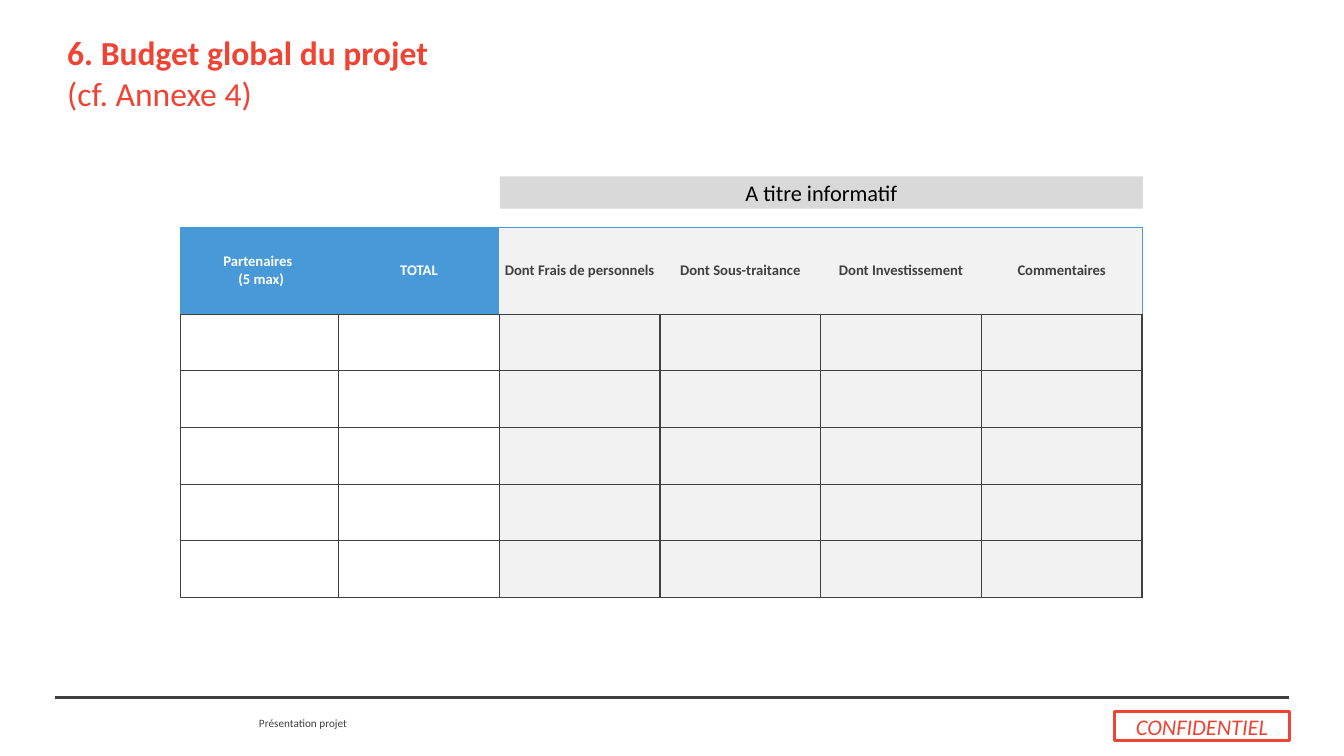
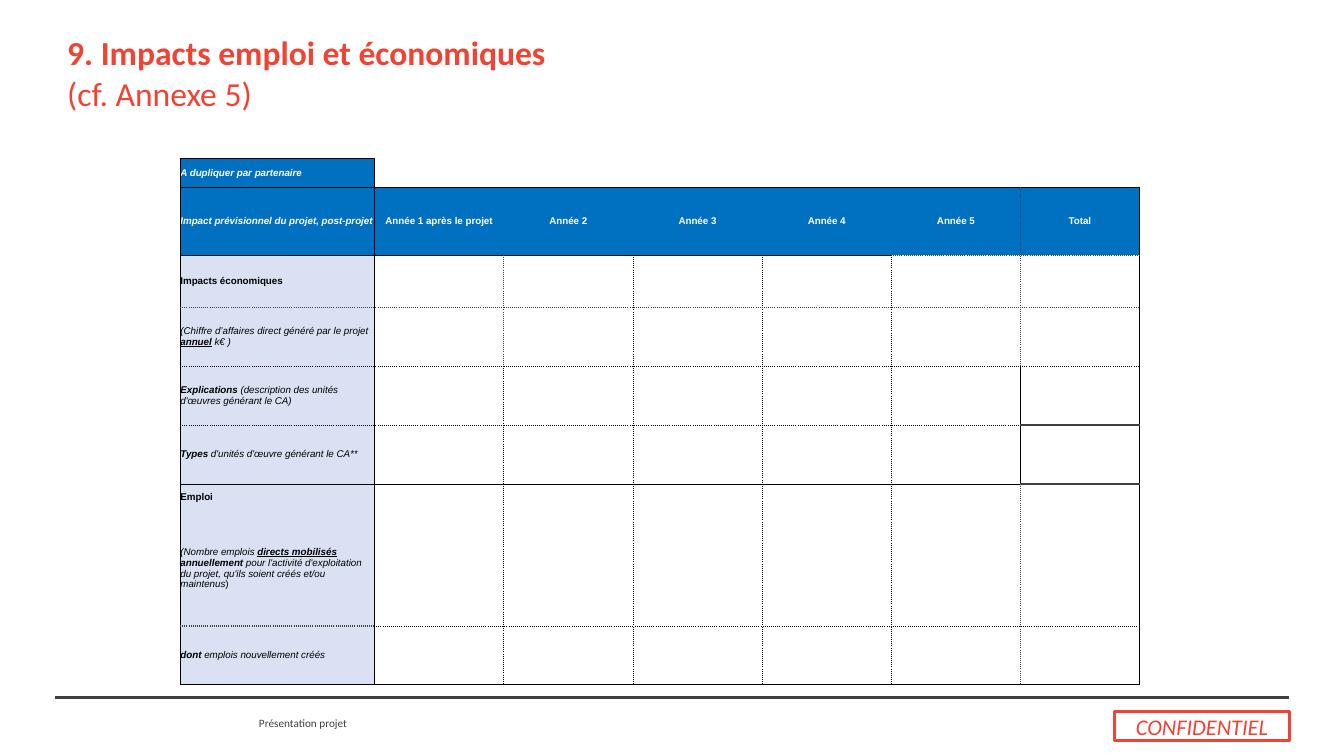
"""Build two project slides: overall budget, and job and economic impacts."""
from dataclasses import dataclass

from lxml.etree import SubElement
from pptx import Presentation
from pptx.dml.color import RGBColor as RGB
from pptx.enum.shapes import MSO_CONNECTOR as CONN, MSO_SHAPE as SHAPE
from pptx.enum.text import MSO_ANCHOR as ANCHOR, MSO_AUTO_SIZE as FIT, PP_ALIGN as ALIGN
from pptx.oxml.ns import qn
from pptx.util import Pt


@dataclass(frozen=True)
class Theme:
    font: str = "Calibri"
    form_font: str = "Arial"
    red: str = "EF4333"
    ink: str = "404040"
    black: str = "000000"
    white: str = "FFFFFF"
    band: str = "D9D9D9"
    pale: str = "F2F2F2"
    sky: str = "4799D7"
    blue: str = "0070C0"
    lavender: str = "D9E1F2"
    title: float = 24
    label: float = 16
    header: float = 10.5
    footer: float = 8
    form: float = 7


T = Theme()

SOLID = (T.black, 0.5, "solid")
DOT = (T.black, 0.5, "sysDot")
GREY = (T.ink, 1, "solid")
GREY_DOT = (T.ink, 1, "sysDot")
SKY = (T.sky, 0.75, "solid")

BUDGET_HEADERS = [
    "Partenaires \v (5 max)", "TOTAL", "Dont Frais de personnels",
    "Dont Sous-traitance", "Dont Investissement", "Commentaires",
]
YEAR_HEADERS = ["Année 1 après le projet", "Année 2", "Année 3", "Année 4", "Année 5", "Total"]
IMPACT_LABELS = [
    [("A dupliquer par partenaire", "bi")],
    [("Impact prévisionnel du projet, post-projet", "bi")],
    [("Impacts économiques", "b")],
    [("(Chiffre d’affaires direct généré par le projet ", "i"), ("annuel", "biu"),
     (" ", "bi"), ("k€ )", "i")],
    [("Explications ", "bi"), ("(description des unités d'œuvres générant le CA)", "i")],
    [("Types ", "bi"), ("d'unités d'œuvre générant le CA**", "i")],
    [("Emploi", "b")],
    [("(Nombre emplois ", "i"), ("directs mobilisés", "biu"), (" annuellement ", "bi"),
     ("pour l'activité d'exploitation du projet, qu'ils soient créés et/ou maintenus", "i"),
     (")", "")],
    [("dont ", "bi"), ("emplois nouvellement créés", "i")],
]


def points(*values):
    return [Pt(v) for v in values]


def set_font(p, size, color, name=T.font, align=ALIGN.LEFT):
    p.alignment = align
    p.font.name, p.font.size = name, Pt(size)
    p.font.color.rgb = RGB.from_string(color)


def add_run(p, text, flags=""):
    r = p.add_run()
    r.text = text
    r.font.bold, r.font.italic = "b" in flags, "i" in flags
    if "u" in flags:
        r.font.underline = True


def set_margins(tf, x=0, y=0):
    tf.margin_left = tf.margin_right = Pt(x)
    tf.margin_top = tf.margin_bottom = Pt(y)


def add_box(slide, at, text, color, fill=None, line=None, italic=False):
    sp = slide.shapes.add_shape(SHAPE.RECTANGLE, *points(*at))
    sp.shadow.inherit = False
    if fill:
        sp.fill.solid()
        sp.fill.fore_color.rgb = RGB.from_string(fill)
    else:
        sp.fill.background()
    if line:
        sp.line.color.rgb = RGB.from_string(line)
        sp.line.width = Pt(2)
    else:
        sp.line.fill.background()
    tf = sp.text_frame
    tf.vertical_anchor = ANCHOR.MIDDLE
    p = tf.paragraphs[0]
    p.text = text
    set_font(p, T.label, color, align=ALIGN.CENTER)
    p.font.italic = italic


def add_slide(prs, layout, heading, annex):
    slide = prs.slides.add_slide(layout)
    title = slide.shapes.title
    title.left, title.top, title.width, title.height = points(48, 21.6, 864, 60.5)
    tf = title.text_frame
    tf.auto_size, tf.word_wrap, tf.vertical_anchor = FIT.NONE, True, ANCHOR.MIDDLE
    set_margins(tf, y=3.6)
    p = tf.paragraphs[0]
    add_run(p, heading, "b")
    p.add_line_break()
    add_run(p, annex)
    set_font(p, T.title, T.red)
    add_box(slide, (796.3, 508.3, 124.6, 20.9), "CONFIDENTIEL", T.red, line=T.red, italic=True)
    return slide


def add_footer(slide, layout):
    sp = slide.shapes.add_textbox(*points(185, 512, 63.4, 9.4))
    set_margins(sp.text_frame)
    sp.text_frame.word_wrap = False
    p = sp.text_frame.paragraphs[0]
    p.text = "Présentation projet"
    set_font(p, T.footer, T.ink)
    rule = slide.shapes.add_connector(CONN.STRAIGHT, *points(39.6, 498.2, 920.9, 498.2))
    rule.line.color.rgb = RGB.from_string(T.ink)
    rule.line.width = Pt(1.5)
    SubElement(rule.element.spPr, qn("a:effectLst"))
    for part in (sp, rule):
        layout.shapes.element.append(part.element)


def add_grid(slide, left, top, widths, heights):
    sp = slide.shapes.add_table(
        len(heights), len(widths), *points(left, top, sum(widths), sum(heights)))
    table = sp.table
    table.first_row = table.horz_banding = False
    for col, width in zip(table.columns, widths):
        col.width = Pt(width)
    for row, height in zip(table.rows, heights):
        row.height = Pt(height)
    return table


def set_borders(cell, left, right, top, bottom):
    tc_pr = cell._tc.get_or_add_tcPr()
    for side, line in zip("LRTB", (left, right, top, bottom)):
        ln = SubElement(tc_pr, qn(f"a:ln{side}"))
        if line is None:
            SubElement(ln, qn("a:noFill"))
            continue
        color, width, dash = line
        ln.set("w", str(Pt(width)))
        SubElement(SubElement(ln, qn("a:solidFill")), qn("a:srgbClr"), val=color)
        SubElement(ln, qn("a:prstDash"), val=dash)


def fill_cell(cell, runs, fill, size, color, name=T.font, align=ALIGN.LEFT):
    if fill:
        cell.fill.solid()
        cell.fill.fore_color.rgb = RGB.from_string(fill)
    else:
        cell.fill.background()
    set_margins(cell)
    cell.vertical_anchor = ANCHOR.MIDDLE
    p = cell.text_frame.paragraphs[0]
    for text, flags in runs:
        first, *rest = text.split("\v")
        add_run(p, first, flags)
        for part in rest:
            p.add_line_break()
            add_run(p, part, flags)
    set_font(p, size, color, name, align)
    if not runs:
        SubElement(p._p, qn("a:endParaRPr"), sz=str(int(size * 100)))


def add_budget_table(slide):
    widths, heights = [113] + [114.8] * 5, [62.2] + [40.5] * 5
    table = add_grid(slide, 128.9, 162.2, widths, heights)
    last = len(widths) - 1
    for row in range(len(heights)):
        for col in range(len(widths)):
            cell, main = table.cell(row, col), col < 2
            if row == 0:
                set_borders(cell, SKY if col == 0 else None, SKY if col == last else None, SKY, GREY)
                fill_cell(cell, [(BUDGET_HEADERS[col], "b")], T.sky if main else T.pale,
                          T.header, T.white if main else T.ink, align=ALIGN.CENTER)
            else:
                set_borders(cell, GREY, GREY, GREY, GREY)
                fill_cell(cell, [], None if main else T.pale, T.header, T.ink)


def impact_h_line(edge, col):
    """Return the line along a horizontal edge of the impact table."""
    if col == 7 or (edge == 0 and col > 0) or edge == 7:
        return None
    if edge == 2 and col in (5, 6):
        return GREY_DOT
    if col == 6 and edge in (5, 6):
        return GREY
    if edge == 3 or (edge == 8 and col == 0):
        return GREY_DOT
    return DOT if edge in (4, 5, 8) else SOLID


def impact_v_line(row, edge):
    """Return the line along a vertical edge of the impact table."""
    if edge < 2:
        return SOLID
    if row == 0 or edge == 8:
        return None
    if edge == 7:
        return SOLID
    if edge == 6:
        return SOLID if row in (4, 5) else GREY_DOT
    if row == 1:
        return None
    return GREY_DOT if edge == 2 and row in (2, 3) else DOT


def impact_content(row, col):
    """Return the runs, fill, text colour and alignment of an impact cell."""
    if col == 0:
        head = row < 2
        return (IMPACT_LABELS[row], T.blue if head else T.lavender,
                T.white if head else T.black, ALIGN.LEFT)
    if row == 1 and col < 7:
        return [(YEAR_HEADERS[col - 1], "b")], T.blue, T.white, ALIGN.CENTER
    return [], T.white if row > 1 and col < 7 else None, T.black, ALIGN.LEFT


def add_impact_table(slide):
    widths = [138.6] + [92.3] * 5 + [84.8, 42.5]
    heights = [20.8, 48.5, 37.2, 42.1, 42.1, 42.1, 18.9, 82.5, 41.8]
    table = add_grid(slide, 128.9, 113, widths, heights)
    for col in range(1, 7):
        table.cell(6, col).merge(table.cell(7, col))
    for row in range(len(heights)):
        for col in range(len(widths)):
            cell = table.cell(row, col)
            below = row + (cell.span_height if cell.is_merge_origin else 1)
            set_borders(cell, impact_v_line(row, col), impact_v_line(row, col + 1),
                        impact_h_line(row, col), impact_h_line(below, col))
            runs, fill, color, align = impact_content(row, col)
            fill_cell(cell, runs, fill, T.form, color, T.form_font, align)


def main():
    prs = Presentation()
    prs.slide_width, prs.slide_height = points(960, 540)
    layout = prs.slide_layouts[5]
    for ph in list(layout.placeholders)[1:]:
        layout.shapes.element.remove(ph.element)

    budget = add_slide(prs, layout, "6. Budget global du projet", "(cf. Annexe 4)")
    add_footer(budget, layout)
    add_budget_table(budget)
    add_box(budget, (357, 126, 459.4, 23), "A titre informatif", T.black, fill=T.band)

    impacts = add_slide(prs, layout, "9. Impacts emploi et économiques", "(cf. Annexe 5)")
    add_impact_table(impacts)
    prs.save("out.pptx")


if __name__ == "__main__":
    main()
